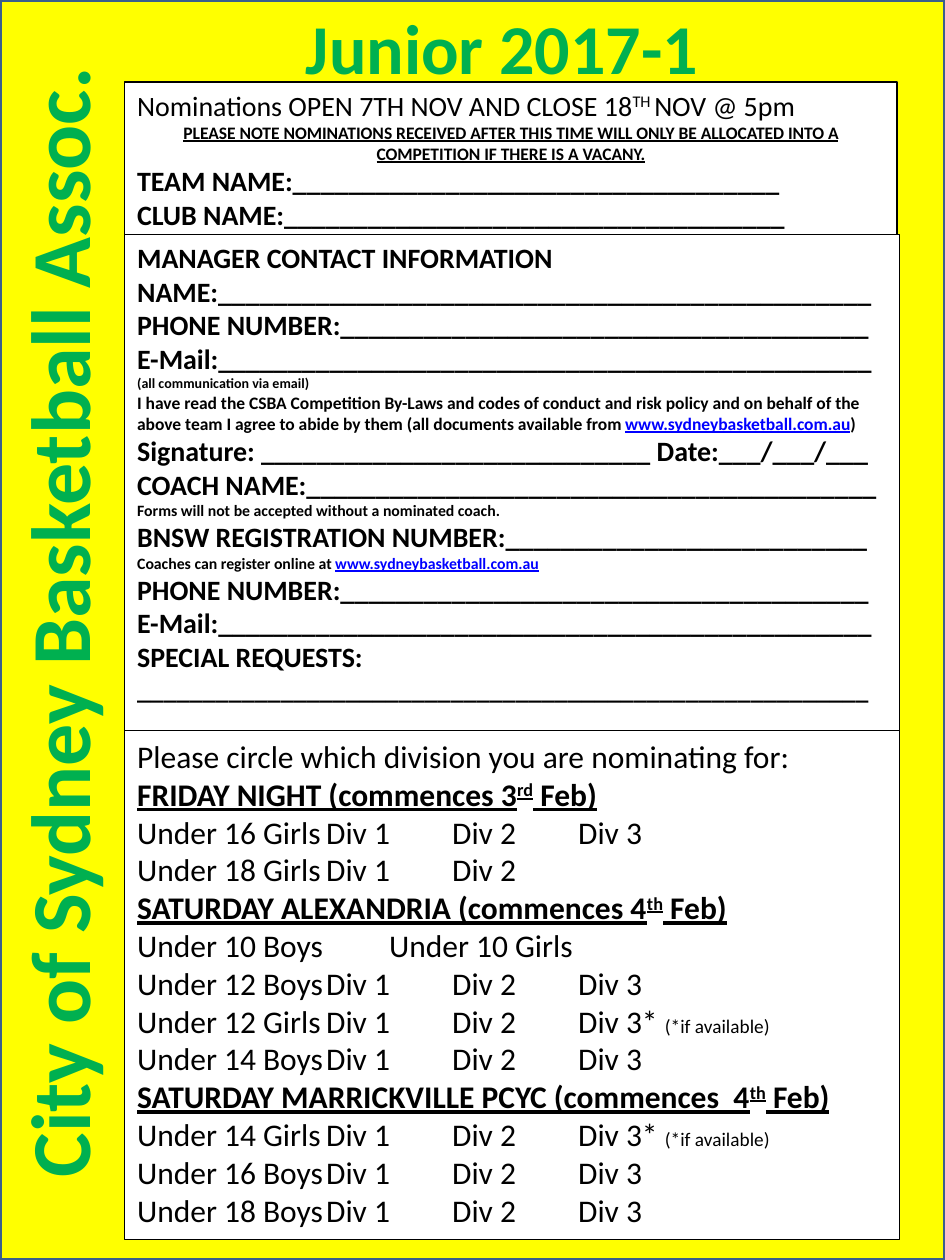
import pptx
import pptx.dml.color
import pptx.enum.shapes
import pptx.enum.text
import pptx.oxml
import pptx.oxml.ns
import pptx.util

Inches = pptx.util.Inches
Pt = pptx.util.Pt
RGBColor = pptx.dml.color.RGBColor
ALIGN = pptx.enum.text.PP_ALIGN

YELLOW = RGBColor(0xFF, 0xFF, 0x00)
NAVY = RGBColor(0x3A, 0x5F, 0x8C)
WHITE = RGBColor(0xFF, 0xFF, 0xFF)
BLACK = RGBColor(0x00, 0x00, 0x00)
LINK_BLUE = RGBColor(0x00, 0x00, 0xFF)
GREEN = RGBColor(0x00, 0xB0, 0x50)

WEBSITE = "www.sydneybasketball.com.au"


def styled(text, size=16, bold=False, underline=False, color=BLACK, raised=False, outline=None):
    return dict(text=text, size=size, bold=bold, underline=underline,
                color=color, raised=raised, outline=outline)


def field(label, blanks):
    return [styled(label + "_" * blanks, bold=True)]


def note(text, size):
    return [styled(text, size, bold=True)]


def website(size):
    return styled(WEBSITE, size, bold=True, underline=True, color=LINK_BLUE)


def heading(start, ordinal, end=" Feb)"):
    look = dict(size=18, bold=True, underline=True)
    return [styled(start, **look), styled(ordinal, raised=True, **look), styled(end, **look)]


def division(team, count=3, limited=False):
    names = [f"Div {number}" for number in range(1, count + 1)]
    row = "\t".join([team] + names)
    if limited:
        return [styled(row + "* ", 18), styled("(*if available)", 11)]
    return [styled(row, 18)]


class FormPage:
    font = "Calibri"

    def __init__(self, page):
        self.page = page

    def rectangle(self, left, top, width, height, fill, line, weight):
        box = self.page.shapes.add_shape(
            pptx.enum.shapes.MSO_SHAPE.RECTANGLE,
            Inches(left), Inches(top), Inches(width), Inches(height))
        box.shadow.inherit = False
        box.fill.solid()
        box.fill.fore_color.rgb = fill
        box.line.color.rgb = line
        box.line.width = Pt(weight)
        return box

    def panel(self, top, width, height, lines, centred=()):
        box = self.rectangle(0.99, top, width, height, WHITE, BLACK, 0.75)
        self.fill_text(box.text_frame, lines, centred)

    def title(self, left, top, width, height, text, size, upward=False):
        box = self.page.shapes.add_textbox(
            Inches(left), Inches(top), Inches(width), Inches(height))
        if upward:
            box.text_frame._txBody.bodyPr.set("vert", "vert270")
        line = [styled(text, size, bold=True, color=GREEN, outline=WHITE)]
        self.fill_text(box.text_frame, [line], centred=(0,))

    def fill_text(self, frame, lines, centred):
        frame.word_wrap = True
        frame.vertical_anchor = pptx.enum.text.MSO_ANCHOR.TOP
        for index, line in enumerate(lines):
            para = frame.paragraphs[0] if index == 0 else frame.add_paragraph()
            para.alignment = ALIGN.CENTER if index in centred else ALIGN.LEFT
            for span in line:
                self.span(para, **span)

    def span(self, para, text, size, bold, underline, color, raised, outline):
        span = para.add_run()
        span.text = text
        span.font.name = self.font
        span.font.size = Pt(size)
        span.font.bold = bold
        span.font.underline = underline
        span.font.color.rgb = color
        properties = span._r.get_or_add_rPr()
        if raised:
            properties.set("baseline", "30000")
        if outline is not None:
            properties.insert(0, pptx.oxml.parse_xml(
                f'<a:ln {pptx.oxml.ns.nsdecls("a")} w="{Pt(1.45)}"><a:solidFill>'
                f'<a:srgbClr val="{outline}"/></a:solidFill></a:ln>'))


def main():
    deck = pptx.Presentation()
    deck.slide_width = Inches(7.5)
    deck.slide_height = Inches(10)
    form = FormPage(deck.slides.add_slide(deck.slide_layouts[6]))

    form.rectangle(0, 0, 7.5, 10, YELLOW, NAVY, 2)

    form.panel(0.65, 6.13, 1.25, [
        [styled("Nominations OPEN 7TH NOV AND CLOSE 18"),
         styled("TH ", raised=True), styled("NOV @ 5pm")],
        [styled("PLEASE NOTE NOMINATIONS RECEIVED AFTER THIS TIME WILL ONLY BE "
                "ALLOCATED INTO A COMPETITION IF THERE IS A VACANY.",
                10, bold=True, underline=True)],
        field("TEAM NAME:", 35),
        field("CLUB NAME:", 36),
    ], centred=(1,))

    phone = field("PHONE NUMBER:", 38)
    email = field("E-Mail:", 47)
    form.panel(1.86, 6.15, 3.95, [
        note("MANAGER CONTACT INFORMATION", 16),
        field("NAME:", 47),
        phone,
        email,
        note("(all communication via email)", 8),
        note("I have read the CSBA Competition By-Laws and codes of conduct and risk "
             "policy and on behalf of the above team I agree to abide by them (all "
             "documents available from ", 10) + [website(10)] + note(")", 10),
        note("Signature: " + "_" * 28 + " Date:___/___/___", 16),
        field("COACH NAME:", 41),
        note("Forms will not be accepted without a nominated coach.", 9),
        field("BNSW REGISTRATION NUMBER:", 26),
        note("Coaches can register online at ", 9) + [website(9)],
        phone,
        email,
        note("SPECIAL REQUESTS: ", 16) + note("_" * 56, 15),
    ])

    form.panel(5.8, 6.15, 4.04, [
        [styled("Please circle which division you are nominating for:", 18)],
        heading("FRIDAY NIGHT (commences 3", "rd"),
        division("Under 16 Girls"),
        division("Under 18 Girls", count=2),
        heading("SATURDAY ALEXANDRIA (commences 4", "th"),
        [styled("Under 10 Boys\t\tUnder 10 Girls", 18)],
        division("Under 12 Boys"),
        division("Under 12 Girls", limited=True),
        division("Under 14 Boys"),
        heading("SATURDAY MARRICKVILLE PCYC (commences  4", "th"),
        division("Under 14 Girls", limited=True),
        division("Under 16 Boys"),
        division("Under 18 Boys"),
    ])

    form.title(1.15, -0.01, 5.67, 0.77, "Junior 2017-1", 40)
    form.title(0, 0.04, 1.01, 9.8, "City of Sydney Basketball Assoc.", 48, upward=True)

    deck.save("out.pptx")


if __name__ == "__main__":
    main()
